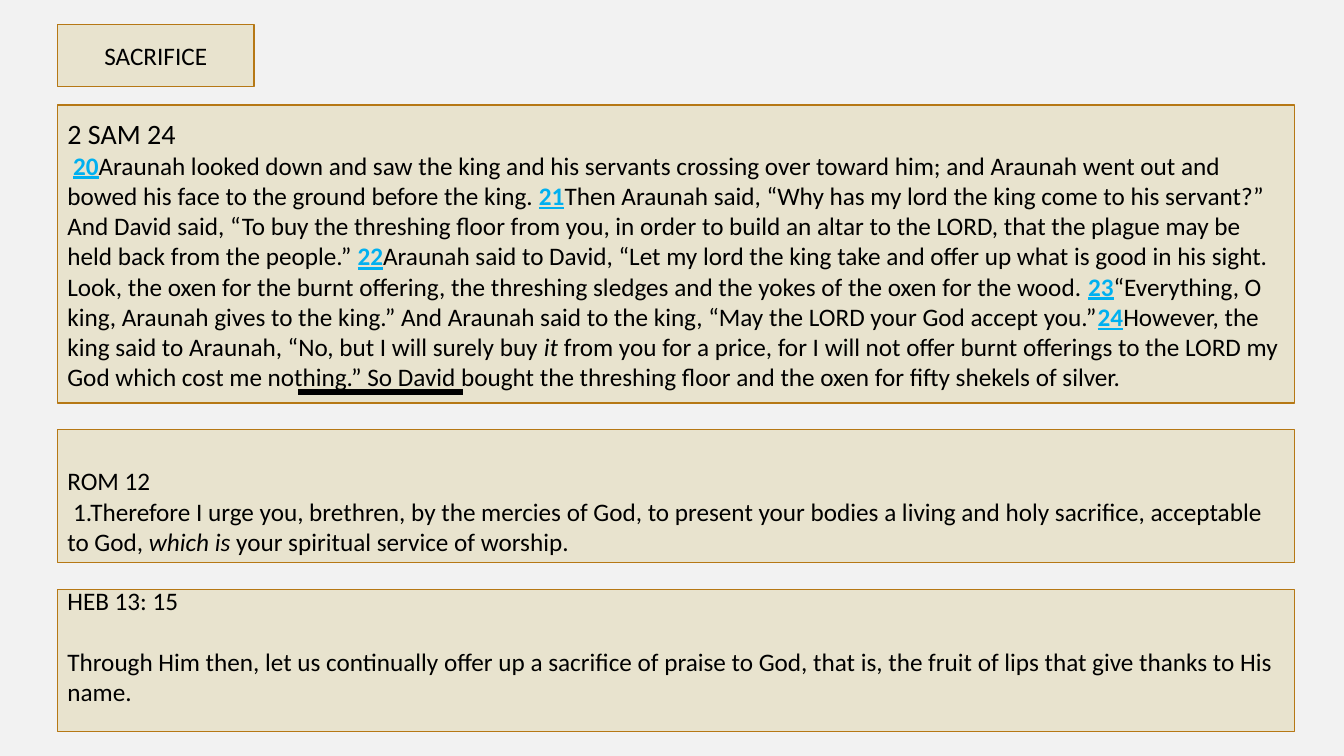
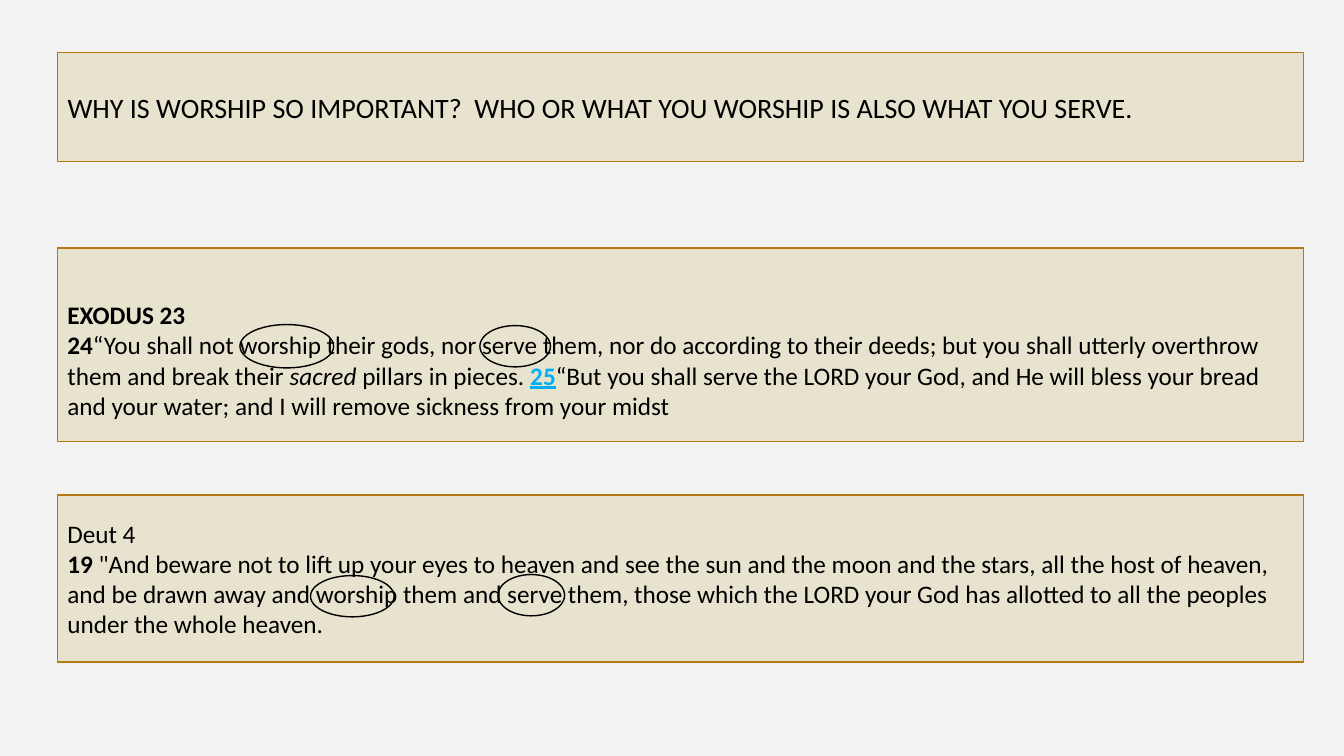
"""Build two slides of scripture passages on sacrifice and worship."""
import pptx
import pptx.util
import pptx.dml.color
import pptx.enum.shapes
import pptx.enum.text
import pptx.oxml

INK, PAPER, SAND, OCHRE, SKY = "000000", "F2F2F2", "E8E3CE", "B67815", "00B0F0"
FONT = "Calibri"
LEFT = 0.57
LINE_HEIGHT = 0.3
INSET = 0.05
ALIGN = pptx.enum.text.PP_ALIGN
SHAPE = pptx.enum.shapes.MSO_SHAPE

STYLES = {
    "plain": {},
    "bold": {"bold": True},
    "italic": {"italic": True},
    "verse": {"bold": True, "underline": True, "color": SKY},
    "large": {"size": 20},
}

SLIDES = [
    {
        "title": {"text": "SACRIFICE", "style": "plain", "align": ALIGN.CENTER,
                  "top": 0.24, "width": 1.95, "height": 0.62},
        "width": 12.27,
        "passages": [
            {"top": 1.04, "height": 2.96, "paragraphs": [
                [("2 SAM 24", "large")],
                [(" ", "plain"),
                 ("20", "verse"),
                 ("Araunah looked down and saw the king and his servants crossing over toward him; "
                  "and Araunah went out and bowed his face to the ground before the king. ", "plain"),
                 ("21", "verse"),
                 ("Then Araunah said, “Why has my lord the king come to his servant?” And David said, "
                  "“To buy the threshing floor from you, in order to build an altar to the LORD, "
                  "that the plague may be held back from the people.” ", "plain"),
                 ("22", "verse"),
                 ("Araunah said to David, “Let my lord the king take and offer up what is good in his "
                  "sight. Look, the oxen for the burnt offering, the threshing sledges and the yokes "
                  "of the oxen for the wood. ", "plain"),
                 ("23", "verse"),
                 ("“Everything, O king, Araunah gives to the king.” And Araunah said to the king, "
                  "“May the LORD your God accept you.”", "plain"),
                 ("24", "verse"),
                 ("However, the king said to Araunah, “No, but I will surely buy ", "plain"),
                 ("it", "italic"),
                 (" from you for a price, for I will not offer burnt offerings to the LORD my God "
                  "which cost me nothing.” So David bought the threshing floor and the oxen for "
                  "fifty shekels of silver.", "plain")],
            ]},
            {"top": 4.26, "height": 1.32, "inset_top": INSET + LINE_HEIGHT, "paragraphs": [
                [("ROM 12", "plain")],
                [(" 1.Therefore I urge you, brethren, by the mercies of God, to present your bodies "
                  "a living and holy sacrifice, acceptable to God, ", "plain"),
                 ("which is", "italic"),
                 (" your spiritual service of worship.", "plain")],
            ]},
            {"top": 5.85, "height": 1.41, "inset_top": 0, "inset_bottom": LINE_HEIGHT,
             "gap": 22, "paragraphs": [
                [("HEB 13: 15", "plain")],
                [("Through Him then, let us continually offer up a sacrifice of praise to God, that "
                  "is, the fruit of lips that give thanks to His name.", "plain")],
             ]},
        ],
        "underlines": [(2.96, 4.59, 3.89)],
        "circles": [],
    },
    {
        "title": {"text": "WHY IS WORSHIP SO IMPORTANT?  WHO OR WHAT YOU WORSHIP IS ALSO WHAT YOU SERVE.",
                  "style": "large", "align": ALIGN.LEFT,
                  "top": 0.52, "width": 12.36, "height": 1.08},
        "width": 12.36,
        "passages": [
            {"top": 2.46, "height": 1.92, "inset_top": INSET + LINE_HEIGHT, "paragraphs": [
                [("EXODUS 23", "bold")],
                [("24", "bold"),
                 ("“You shall not worship their gods, nor serve them, nor do according to their "
                  "deeds; but you shall utterly overthrow them and break their ", "plain"),
                 ("sacred ", "italic"),
                 ("pillars in pieces. ", "plain"),
                 ("25", "verse"),
                 ("“But you shall serve the LORD your God, and He will bless your bread and your "
                  "water; and I will remove sickness from your midst", "plain")],
            ]},
            {"top": 4.91, "height": 1.66, "paragraphs": [
                [("Deut 4", "plain")],
                [("19", "bold"),
                 (" \"And beware not to lift up your eyes to heaven and see the sun and the moon and "
                  "the stars, all the host of heaven, and be drawn away and worship them and serve "
                  "them, those which the LORD your God has allotted to all the peoples under the "
                  "whole heaven.", "plain")],
            ]},
        ],
        "underlines": [],
        "circles": [(2.38, 3.22, 0.93, 0.43), (4.76, 3.23, 0.7, 0.41),
                    (3.08, 5.71, 0.83, 0.41), (4.94, 5.7, 0.66, 0.41)],
    },
]


def inches(*values):
    return [pptx.util.Inches(value) for value in values]


def paint(color_format, color):
    color_format.rgb = pptx.dml.color.RGBColor.from_string(color)


def outline(shape, color, width=1):
    paint(shape.line.fill_color if hasattr(shape.line, "fill_color") else shape.line.color, color)
    shape.line.width = pptx.util.Pt(width)


def format_panel(shape):
    shape.fill.solid()
    paint(shape.fill.fore_color, SAND)
    outline(shape, OCHRE)


def write(text_frame, paragraphs, align=ALIGN.LEFT, inset_top=INSET, inset_bottom=INSET, gap=0):
    text_frame.word_wrap = True
    text_frame.auto_size = pptx.enum.text.MSO_AUTO_SIZE.NONE
    text_frame.vertical_anchor = pptx.enum.text.MSO_ANCHOR.MIDDLE
    text_frame.margin_top, text_frame.margin_bottom = inches(inset_top, inset_bottom)
    for index, runs in enumerate(paragraphs):
        paragraph = text_frame.add_paragraph() if index else text_frame.paragraphs[0]
        paragraph.alignment = align
        paragraph.space_before = pptx.util.Pt(gap if index else 0)
        for text, style_name in runs:
            style = STYLES[style_name]
            run = paragraph.add_run()
            run.text = text
            run.font.name = FONT
            run.font.size = pptx.util.Pt(style.get("size", 18))
            run.font.bold = style.get("bold", False)
            run.font.italic = style.get("italic", False)
            run.font.underline = style.get("underline", False)
            paint(run.font.color, style.get("color", INK))


def add_title(slide, title):
    shape = slide.shapes.title
    shape.left, shape.top, shape.width, shape.height = inches(
        LEFT, title["top"], title["width"], title["height"])
    format_panel(shape)
    write(shape.text_frame, [[(title["text"], title["style"])]], title["align"])


def add_passage(slide, width, top, height, paragraphs, **layout):
    shape = slide.shapes.add_shape(SHAPE.RECTANGLE, *inches(LEFT, top, width, height))
    shape.shadow.inherit = False
    format_panel(shape)
    write(shape.text_frame, paragraphs, **layout)


def add_underline(slide, start, end, y):
    connector = slide.shapes.add_connector(
        pptx.enum.shapes.MSO_CONNECTOR.STRAIGHT, *inches(start, y, end, y))
    outline(connector, INK, 4.5)
    connector.element.spPr.append(pptx.oxml.parse_xml(
        '<a:effectLst xmlns:a="http://schemas.openxmlformats.org/drawingml/2006/main"/>'))


def add_circle(slide, *box):
    shape = slide.shapes.add_shape(SHAPE.OVAL, *inches(*box))
    shape.shadow.inherit = False
    shape.fill.background()
    outline(shape, INK)


def main():
    presentation = pptx.Presentation()
    presentation.slide_width, presentation.slide_height = inches(13.33, 7.5)
    background = presentation.slide_master.background.fill
    background.solid()
    paint(background.fore_color, PAPER)
    for content in SLIDES:
        slide = presentation.slides.add_slide(presentation.slide_layouts.get_by_name("Title Only"))
        add_title(slide, content["title"])
        for passage in content["passages"]:
            add_passage(slide, content["width"], **passage)
        for underline in content["underlines"]:
            add_underline(slide, *underline)
        for circle in content["circles"]:
            add_circle(slide, *circle)
    presentation.save("out.pptx")


if __name__ == "__main__":
    main()
